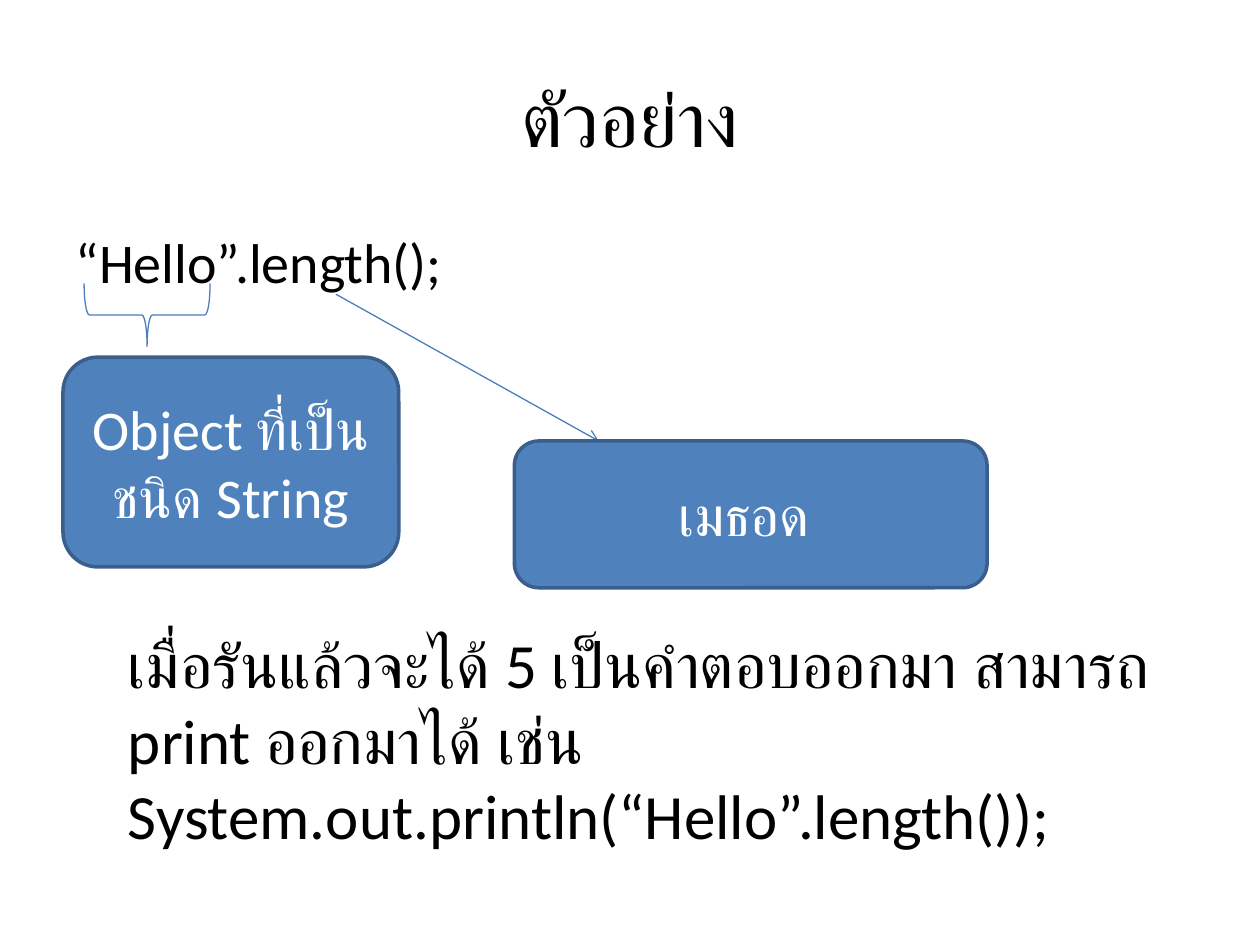
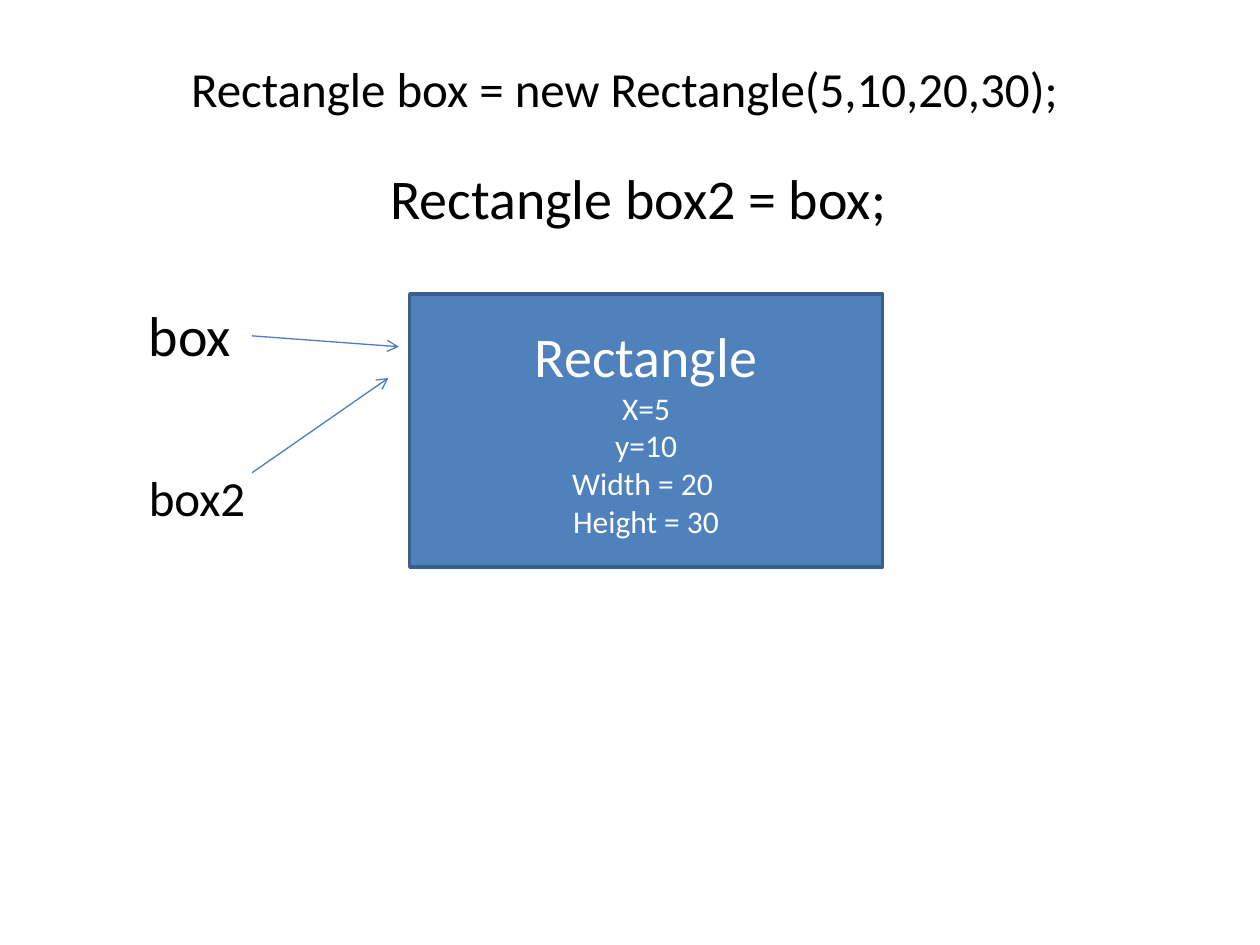
from dataclasses import dataclass

from lxml.etree import SubElement
from pptx import Presentation
from pptx.dml.color import RGBColor
from pptx.enum.shapes import MSO_CONNECTOR, MSO_SHAPE as Preset
from pptx.enum.text import MSO_ANCHOR as Anchor, MSO_AUTO_SIZE as Fit, PP_ALIGN as Align
from pptx.oxml.ns import qn
from pptx.util import Cm, Pt


@dataclass(frozen=True)
class Theme:
    font: str = "Calibri"
    ink: str = "000000"
    on_fill: str = "FFFFFF"
    fill: str = "4F81BD"
    border: str = "3A5F8C"
    connector: str = "4B7EBC"
    border_width: float = 2
    connector_width: float = 0.75
    title: int = 44
    result: int = 36
    code: int = 32
    small_code: int = 28
    field: int = 18


THEME = Theme()
TITLE_AND_BODY, TITLE_ONLY = 1, 5

EXAMPLE = {
    "title": ("ตัวอย่าง", (1.27, 0.76, 22.86, 3.18)),
    "call": ("“Hello”.length();", (1.27, 4.45, 22.86, 12.57)),
    "brace": (2.33, 5.08, 1.27, 2.54),
    "arrow": ((6.77, 5.93), (12.07, 8.89)),
    "callouts": [
        ("Object ที่เป็นชนิด String", (1.27, 7.2, 6.77, 4.23)),
        ("เมธอด ", (10.37, 8.89, 9.53, 2.96)),
    ],
    "result": (
        "เมื่อรันแล้วจะได้ 5 เป็นคำตอบออกมา สามารถ print ออกมาได้ เช่น "
        "System.out.println(“Hello”.length());",
        (2.33, 12.49, 21.59, 4.87),
    ),
}

REFERENCES = {
    "title": ("Rectangle box = new Rectangle(5,10,20,30);", (3.6, 1.06, 18.19, 1.45)),
    "assignment": ("Rectangle box2 = box;", (7.62, 3.18, 10.87, 1.63)),
    "variables": [
        ("box", THEME.code, (2.75, 5.93, 2.54, 1.63), ((5.08, 6.77), (8.04, 6.99))),
        ("box2", THEME.small_code, (2.75, 9.31, 2.54, 1.45), ((5.08, 9.53), (7.83, 7.62))),
    ],
    "object": (
        "Rectangle",
        ["X=5", "y=10", "Width = 20 ", "Height = 30"],
        (8.26, 5.93, 9.53, 5.5),
    ),
}


def rgb(value):
    return RGBColor.from_string(value)


def cm(values):
    return [Cm(value) for value in values]


def place(shape, area):
    shape.left, shape.top, shape.width, shape.height = cm(area)
    return shape


def write(shape, text, *, size, color=THEME.ink, align=Align.LEFT,
          anchor=Anchor.TOP, wrap=True, fit=None, more=False):
    frame = shape.text_frame
    frame.word_wrap = wrap
    frame.vertical_anchor = anchor
    if fit is not None:
        frame.auto_size = fit
    paragraph = frame.add_paragraph() if more else frame.paragraphs[0]
    paragraph.alignment = align
    run = paragraph.add_run()
    run.text = text
    run.font.name = THEME.font
    run.font.size = Pt(size)
    run.font.color.rgb = rgb(color)
    return paragraph


def add_label(slide, text, area, **style):
    return write(slide.shapes.add_textbox(*cm(area)), text, fit=Fit.SHAPE_TO_FIT_TEXT, **style)


def outline(shape, color, width):
    shape.line.color.rgb = rgb(color)
    shape.line.width = Pt(width)


def add_block(slide, preset, area, heading, details=()):
    block = slide.shapes.add_shape(preset, *cm(area))
    block.shadow.inherit = False
    block.fill.solid()
    block.fill.fore_color.rgb = rgb(THEME.fill)
    outline(block, THEME.border, THEME.border_width)
    style = dict(color=THEME.on_fill, align=Align.CENTER, anchor=Anchor.MIDDLE)
    write(block, heading, size=THEME.code, **style)
    for detail in details:
        write(block, detail, size=THEME.field, more=True, **style)


def add_arrow(slide, start, end):
    arrow = slide.shapes.add_connector(MSO_CONNECTOR.STRAIGHT, *cm(start + end))
    outline(arrow, THEME.connector, THEME.connector_width)
    properties = arrow._element.spPr
    SubElement(properties.find(qn("a:ln")), qn("a:tailEnd"), type="arrow")
    SubElement(properties, qn("a:effectLst"))


def add_brace(slide, area):
    brace = slide.shapes.add_shape(Preset.RIGHT_BRACE, *cm(area))
    brace.rotation = 90
    brace.shadow.inherit = False
    brace.fill.background()
    outline(brace, THEME.connector, THEME.connector_width)


def build_example(deck):
    slide = deck.slides.add_slide(deck.slide_layouts[TITLE_AND_BODY])
    title, title_area = EXAMPLE["title"]
    write(place(slide.shapes.title, title_area), title, size=THEME.title,
          align=Align.CENTER, anchor=Anchor.MIDDLE)
    call, call_area = EXAMPLE["call"]
    call_line = write(place(slide.placeholders[1], call_area), call, size=THEME.code)
    SubElement(call_line._p.get_or_add_pPr(), qn("a:buNone"))
    add_brace(slide, EXAMPLE["brace"])
    add_arrow(slide, *EXAMPLE["arrow"])
    for callout, area in EXAMPLE["callouts"]:
        add_block(slide, Preset.ROUNDED_RECTANGLE, area, callout)
    add_label(slide, *EXAMPLE["result"], size=THEME.result)


def build_references(deck):
    slide = deck.slides.add_slide(deck.slide_layouts[TITLE_ONLY])
    title, title_area = REFERENCES["title"]
    write(place(slide.shapes.title, title_area), title, size=THEME.small_code,
          wrap=False, fit=Fit.SHAPE_TO_FIT_TEXT)
    add_label(slide, *REFERENCES["assignment"], size=THEME.code, wrap=False)
    heading, fields, object_area = REFERENCES["object"]
    add_block(slide, Preset.RECTANGLE, object_area, heading, fields)
    for variable, size, area, ends in REFERENCES["variables"]:
        add_label(slide, variable, area, size=size)
        add_arrow(slide, *ends)


def main():
    deck = Presentation()
    deck.slide_width, deck.slide_height = Cm(25.4), Cm(19.05)
    build_example(deck)
    build_references(deck)
    deck.save("out.pptx")


if __name__ == "__main__":
    main()
